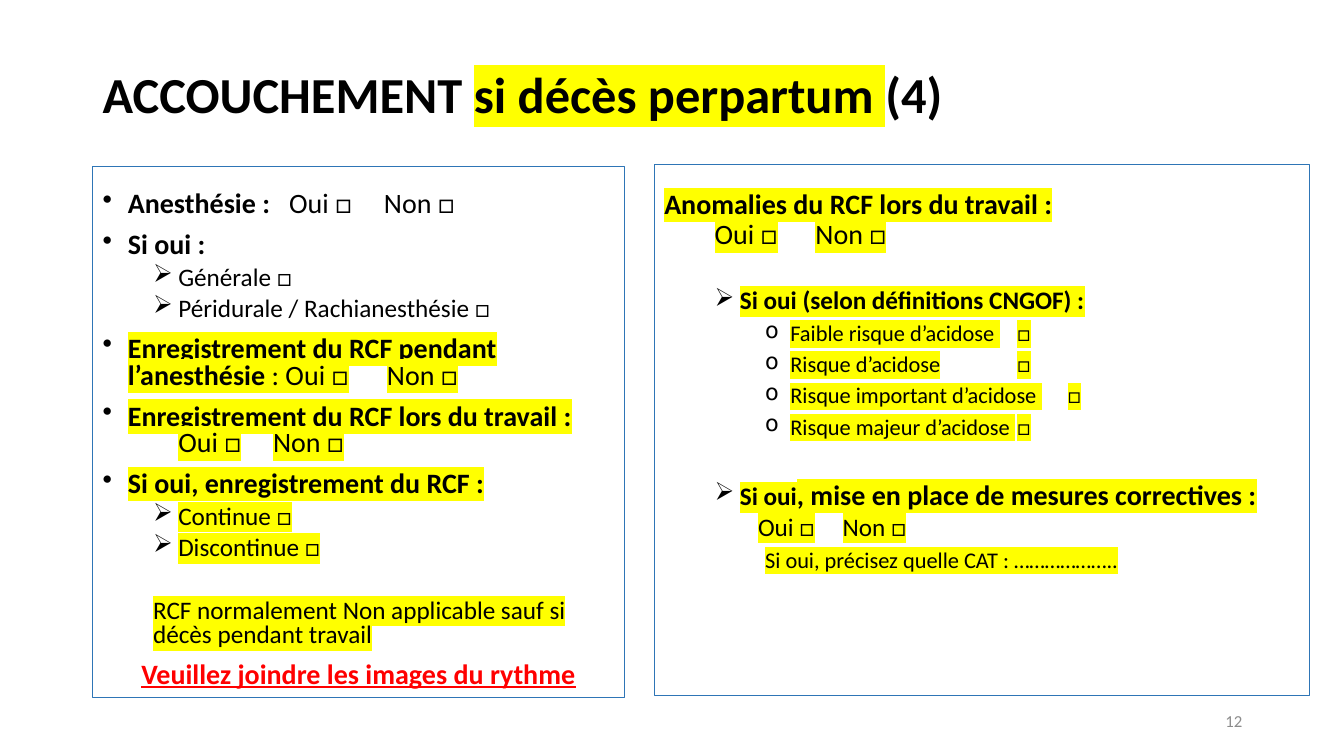
import pptx
import pptx.util
import pptx.dml.color
import pptx.enum.shapes
import pptx.enum.text
import pptx.oxml
import pptx.oxml.ns

Inches = pptx.util.Inches
Pt = pptx.util.Pt
ALIGN = pptx.enum.text.PP_ALIGN
ANCHOR = pptx.enum.text.MSO_ANCHOR

COLORS = {
    "text": "000000",
    "marker": "FFFF00",
    "alert": "FF0000",
    "border": "2E75B6",
    "number": "8C8C8C",
}


def rgb(name):
    return pptx.dml.color.RGBColor.from_string(COLORS[name])


class FormSlide:
    """Style and current slide of the form."""

    font = "Calibri"

    def __init__(self, prs):
        self.slide = prs.slides.add_slide(prs.slide_layouts[6])

    def add_node(self, parent, tag, **attributes):
        node = parent.makeelement(pptx.oxml.ns.qn(tag), attributes)
        parent.append(node)
        return node

    def text_box(self, left, top, width, height, anchor=ANCHOR.TOP):
        box = self.slide.shapes.add_textbox(
            Inches(left), Inches(top), Inches(width), Inches(height))
        box.text_frame.word_wrap = True
        box.text_frame.vertical_anchor = anchor
        return box.text_frame

    def panel(self, left, top, width, height):
        frame = self.slide.shapes.add_shape(
            pptx.enum.shapes.MSO_SHAPE.RECTANGLE,
            Inches(left), Inches(top), Inches(width), Inches(height))
        frame.shadow.inherit = False
        frame.fill.background()
        frame.line.color.rgb = rgb("border")
        frame.line.width = Pt(0.75)
        text = frame.text_frame
        text.word_wrap = True
        text.vertical_anchor = ANCHOR.TOP
        text.margin_top = Inches(0.26)
        return text

    def paragraph(self, frame, runs, size, color="text", level=0, indent=0,
                  bullet=None, before=0, spacing=0.9, align=ALIGN.LEFT, tabs=()):
        """Each run is (text, flags[, size]); flags: b bold, h highlight, u underline."""
        first = frame.paragraphs[0]
        par = frame.add_paragraph() if first.runs else first
        par.level = level
        par.alignment = align
        par.line_spacing = spacing
        par.space_before = Pt(before)
        props = par._p.get_or_add_pPr()
        props.set("marL", str(Inches(indent)))
        props.set("indent", str(Inches(-0.25 if bullet else 0)))
        if bullet:
            self.add_node(props, "a:buChar", char=bullet)
        else:
            self.add_node(props, "a:buNone")
        if tabs:
            stops = self.add_node(props, "a:tabLst")
            for stop in tabs:
                self.add_node(stops, "a:tab", pos=str(Inches(stop)), algn="l")
        par.font.name = self.font
        par.font.size = Pt(size)
        par.font.color.rgb = rgb(color)
        for text, flags, *own_size in runs:
            for number, line in enumerate(text.split("\n")):
                if number:
                    par.add_line_break()
                if line:
                    self.run(par, line, flags, own_size)

    def run(self, par, text, flags, own_size):
        run = par.add_run()
        run.text = text
        run.font.bold = "b" in flags
        if "u" in flags:
            run.font.underline = True
        if own_size:
            run.font.size = Pt(own_size[0])
        if "h" in flags:
            marker = self.add_node(run._r.get_or_add_rPr(), "a:highlight")
            self.add_node(marker, "a:srgbClr", val=COLORS["marker"])


def main():
    prs = pptx.Presentation()
    prs.slide_width = Inches(13.33)
    prs.slide_height = Inches(7.5)
    form = FormSlide(prs)
    yes_no = "Oui □\tNon □"

    # Title
    title = form.text_box(0.92, 0.64, 11.5, 0.78)
    form.paragraph(title, [("ACCOUCHEMENT ", "b"), ("si décès perpartum ", "bh"),
                           ("(4)", "b")], 36)

    # Left panel: anaesthesia and heart rate recording
    anesthesia = form.panel(0.92, 1.65, 5.27, 5.27)

    def question(runs, before=10, tabs=()):
        form.paragraph(anesthesia, runs, 20, indent=0.25, bullet="•",
                       before=before, spacing=0.8, tabs=tabs)

    def options(labels, flags):
        for label in labels:
            form.paragraph(anesthesia, [(label, flags)], 18, level=1, indent=0.75,
                           bullet="➢", before=5, spacing=0.8)

    question([("Anesthésie :\t", "b"), (yes_no, "")], before=0, tabs=(1.85, 2.79))
    question([("Si oui :", "b")])
    options(["Générale □", "Péridurale / Rachianesthésie □"], "")
    question([("Enregistrement du RCF pendant l’anesthésie ", "bh"),
              (": " + yes_no, "h")], tabs=(2.82,))
    question([("Enregistrement du RCF lors du travail :\n\t", "bh"), (yes_no, "h")],
             tabs=(0.75, 1.69))
    question([("Si oui, enregistrement du RCF :", "bh")])
    options(["Continue □", "Discontinue □"], "h")
    form.paragraph(
        anesthesia,
        [("RCF normalement Non applicable sauf si décès pendant travail", "h")],
        18, level=1, indent=0.5, before=27.6, spacing=0.8)
    form.paragraph(anesthesia, [("Veuillez joindre les images du rythme", "bu")], 20,
                   color="alert", before=10, spacing=0.8, align=ALIGN.CENTER)

    # Right panel: heart rate anomalies during labour
    anomalies = form.panel(6.49, 1.63, 6.5, 5.27)
    form.paragraph(anomalies, [("Anomalies du RCF lors du travail :\n\t", "bh"),
                               (yes_no, "h")], 20, tabs=(0.31, 1.25))
    form.paragraph(anomalies, [("Si oui (selon définitions CNGOF) :", "bh")], 18,
                   level=1, indent=0.75, bullet="➢", before=26.5)
    for risk in ("Faible risque d’acidose \t□", "Risque d’acidose\t\t□",
                 "Risque important d’acidose \t□", "Risque majeur d’acidose \t□"):
        form.paragraph(anomalies, [(risk, "h")], 16, level=2, indent=1.25,
                       bullet="o", before=5)
    form.paragraph(
        anomalies,
        [("Si oui", "bh"), (", mise en place de mesures correctives :\n\t", "bh", 20),
         (yes_no, "h")],
        18, level=1, indent=0.75, bullet="➢", before=29.8, tabs=(0.93, 1.77))
    form.paragraph(anomalies, [("Si oui, précisez quelle CAT : ………………..", "h")], 16,
                   level=2, indent=1, before=5)

    # Slide number
    number = form.text_box(9.42, 6.95, 3, 0.4, ANCHOR.MIDDLE)
    form.paragraph(number, [("12", "")], 12, color="number", spacing=1.0,
                   align=ALIGN.RIGHT)

    prs.save("out.pptx")


if __name__ == "__main__":
    main()
